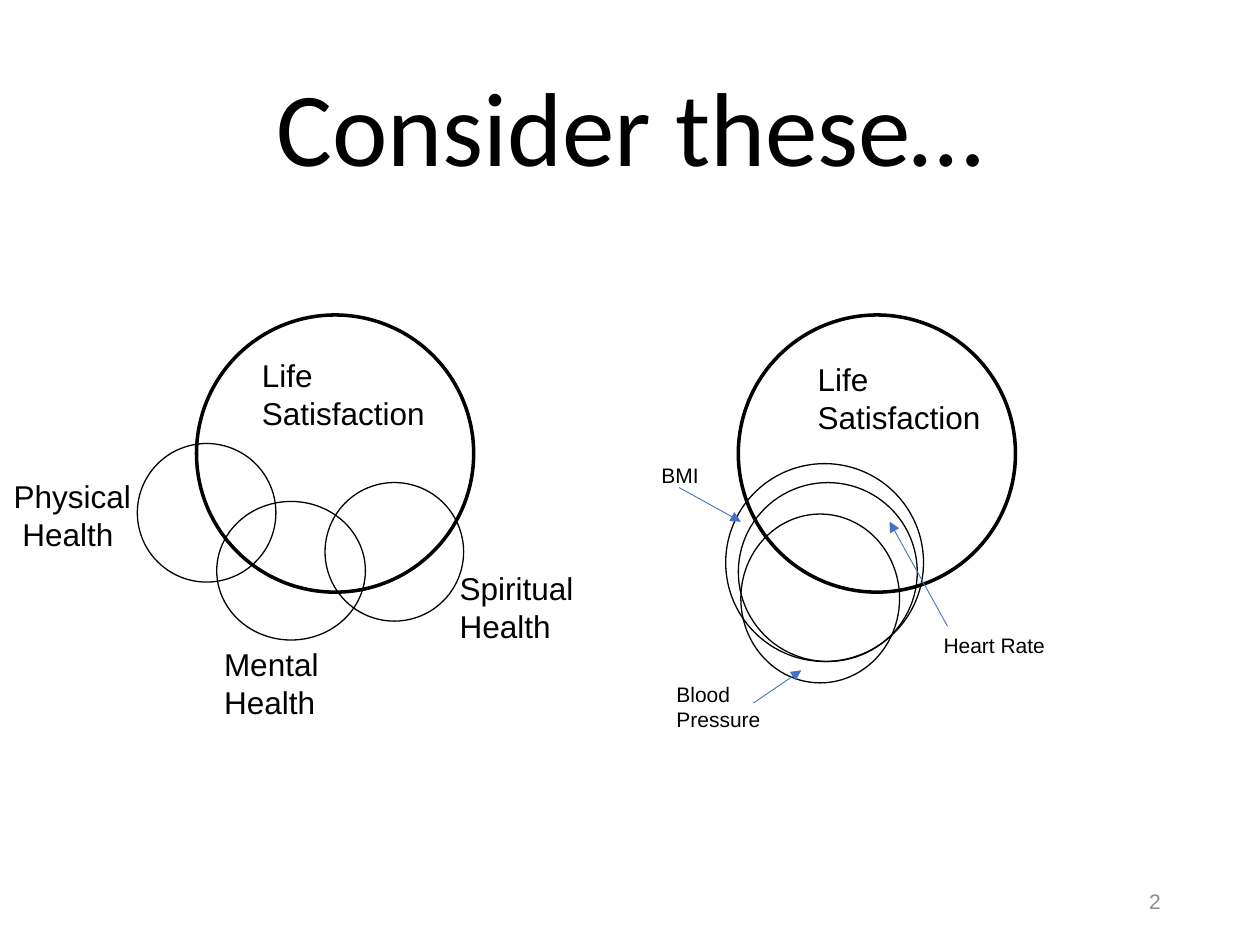
import pptx
import pptx.util
import pptx.dml.color
import pptx.enum.shapes
import pptx.enum.text
import pptx.oxml.ns
from lxml import etree

Inches, Pt = pptx.util.Inches, pptx.util.Pt
ANCHOR = pptx.enum.text.MSO_ANCHOR
ALIGN = pptx.enum.text.PP_ALIGN
BLACK, GREY, BLUE = "000000", "8C8C8C", "4472C4"

# Circles: left, top, width, height, line width
CIRCLES = [
    (1.56, 2.5, 2.2, 2.2, 2),          # life satisfaction, left diagram
    (2.58, 3.83, 1.1, 1.1, 0.75),      # spiritual
    (1.72, 3.98, 1.18, 1.1, 0.75),     # mental
    (1.09, 3.52, 1.1, 1.1, 0.75),      # physical
    (5.86, 2.5, 2.2, 2.2, 2),          # life satisfaction, right diagram
    (5.86, 3.83, 1.42, 1.42, 0.75),    # heart rate
    (5.88, 4.08, 1.26, 1.34, 0.75),    # blood pressure
    (5.76, 3.68, 1.57, 1.57, 0.75),    # BMI
]

# Labels: text, left, top, width, height, size
LABELS = [
    ("Spiritual Health", 3.55, 4.47, 1.18, 0.71, 18),
    ("Mental Health", 1.68, 5.07, 1.18, 0.71, 18),
    ("Physical\v Health", 0.01, 3.74, 1.18, 0.71, 18),
    ("Life Satisfaction", 1.98, 2.78, 1.61, 0.71, 18),
    ("Life Satisfaction", 6.39, 2.81, 1.61, 0.71, 18),
    ("Heart Rate", 7.39, 4.97, 1.18, 0.3, 12),
    ("BMI", 5.15, 3.62, 1.18, 0.3, 12),
    ("Blood Pressure", 5.27, 5.36, 1.18, 0.5, 12),
]

# Arrows: start x, start y, end x, end y
ARROWS = [
    (5.39, 3.87, 5.88, 4.14),
    (7.52, 4.97, 7.06, 4.14),
    (5.98, 5.58, 6.36, 5.32),
]


def colour(hex_text):
    return pptx.dml.color.RGBColor.from_string(hex_text)


def add_text(page, text, left, top, width, height, size, font="Arial",
             ink=BLACK, align=ALIGN.LEFT, anchor=ANCHOR.TOP, spacing=None):
    box = page.shapes.add_textbox(*map(Inches, (left, top, width, height)))
    frame = box.text_frame
    frame.word_wrap = True
    frame.vertical_anchor = anchor
    para = frame.paragraphs[0]
    para.alignment = align
    para.line_spacing = spacing
    for number, line in enumerate(text.split("\v")):
        if number:
            para.add_line_break()
        span = para.add_run()
        span.text = line
        span.font.name = font
        span.font.size = Pt(size)
        span.font.color.rgb = colour(ink)
    return box


def add_circle(page, left, top, width, height, weight):
    circle = page.shapes.add_shape(pptx.enum.shapes.MSO_SHAPE.OVAL,
                                   *map(Inches, (left, top, width, height)))
    circle.shadow.inherit = False
    circle.fill.background()
    circle.line.color.rgb = colour(BLACK)
    circle.line.width = Pt(weight)


def add_arrow(page, *ends):
    arrow = page.shapes.add_connector(
        pptx.enum.shapes.MSO_CONNECTOR.STRAIGHT, *map(Inches, ends))
    arrow.line.color.rgb = colour(BLUE)
    arrow.line.width = Pt(0.5)
    qn = pptx.oxml.ns.qn
    etree.SubElement(arrow.line._get_or_add_ln(), qn("a:tailEnd"), type="triangle")
    etree.SubElement(arrow._element.spPr, qn("a:effectLst"))


def main():
    deck = pptx.Presentation()
    deck.slide_width, deck.slide_height = Inches(10), Inches(7.5)
    page = deck.slides.add_slide(deck.slide_layouts[6])

    # Slide number and title
    add_text(page, "2", 7.06, 6.95, 2.25, 0.4, 12, ink=GREY,
             align=ALIGN.RIGHT, anchor=ANCHOR.MIDDLE)
    add_text(page, "Consider these…", 0.5, 0.3, 9, 1.25, 60, font="Calibri",
             align=ALIGN.CENTER, anchor=ANCHOR.BOTTOM, spacing=0.9)

    # Diagrams
    for circle in CIRCLES:
        add_circle(page, *circle)
    for label in LABELS:
        box = add_text(page, *label)
        box.text_frame.auto_size = pptx.enum.text.MSO_AUTO_SIZE.SHAPE_TO_FIT_TEXT
    for arrow in ARROWS:
        add_arrow(page, *arrow)

    deck.save("out.pptx")


if __name__ == "__main__":
    main()
